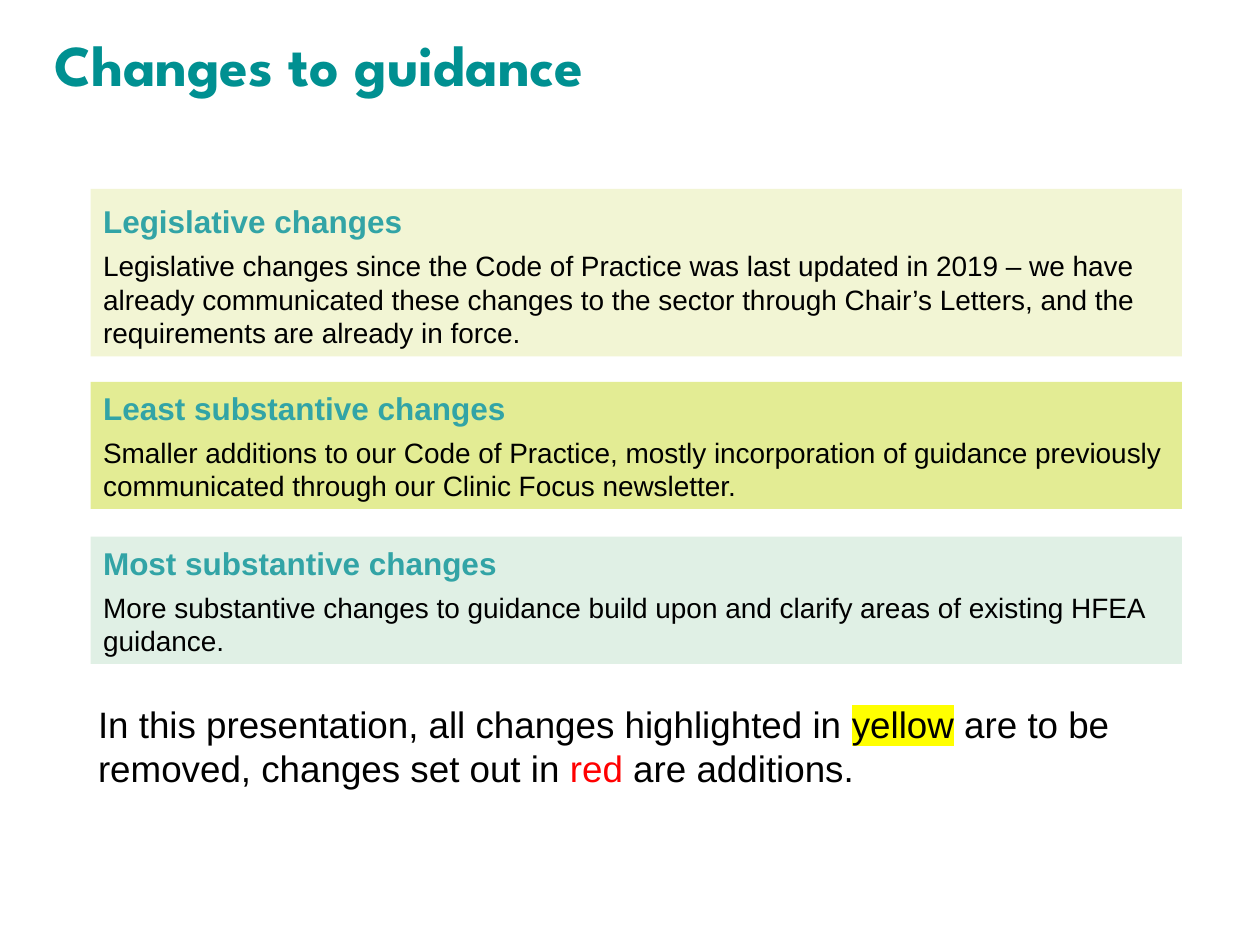
import dataclasses

import lxml.etree
import pptx
import pptx.dml.color
import pptx.enum.shapes
import pptx.enum.text
import pptx.oxml.ns
import pptx.util

Inches = pptx.util.Inches
Pt = pptx.util.Pt


@dataclasses.dataclass(frozen=True)
class Theme:
    font: str = "Arial"
    display: str = "League Spartan"
    title: str = "009091"
    head: str = "32A4A6"
    ink: str = "000000"
    red: str = "FF0000"
    yellow: str = "FFFF00"
    pale: str = "F2F5D4"
    lime: str = "E3EC94"
    mint: str = "E0F0E5"
    title_size: int = 33
    head_size: int = 18
    body_size: int = 16
    note_size: int = 21


THEME = Theme()

PANELS = [
    (1.5, 1.33, THEME.pale, 25.2, "Legislative changes",
     "Legislative changes since the Code of Practice was last updated in 2019 – "
     "we have already communicated these changes to the sector through Chair’s "
     "Letters, and the requirements are already in force."),
    (3.03, 1.01, THEME.lime, None, "Least substantive changes",
     "Smaller additions to our Code of Practice, mostly incorporation of guidance "
     "previously communicated through our Clinic Focus newsletter."),
    (4.26, 1.01, THEME.mint, None, "Most substantive changes",
     "More substantive changes to guidance build upon and clarify areas of "
     "existing HFEA guidance."),
]

NOTE = [
    ("In this presentation, all changes highlighted in ", THEME.ink, None),
    ("yellow", THEME.ink, THEME.yellow),
    (" are to be removed, changes set out in ", THEME.ink, None),
    ("red", THEME.red, None),
    (" are additions.", THEME.ink, None),
]


def rgb(code):
    return pptx.dml.color.RGBColor.from_string(code)


def style(run, size, color, bold=False, face=THEME.font):
    run.font.size = Pt(size)
    run.font.bold = bold
    run.font.name = face
    run.font.color.rgb = rgb(color)


def mark(run, color):
    qn = pptx.oxml.ns.qn
    light = lxml.etree.Element(qn("a:highlight"))
    lxml.etree.SubElement(light, qn("a:srgbClr"), val=color)
    run.font._element.find(qn("a:solidFill")).addnext(light)


def add_box(slide, left, top, width, height):
    box = slide.shapes.add_textbox(
        Inches(left), Inches(top), Inches(width), Inches(height))
    box.text_frame.word_wrap = True
    return box.text_frame


def add_title(slide, text):
    frame = add_box(slide, 0.43, 0.32, 9.13, 0.48)
    frame.margin_left = frame.margin_right = 0
    frame.margin_top = frame.margin_bottom = 0
    frame.text = text
    line = frame.paragraphs[0]
    line.line_spacing = Pt(THEME.title_size)
    style(line.runs[0], THEME.title_size, THEME.title, True, THEME.display)


def add_panel(slide, top, height, fill, pitch, head, body):
    panel = slide.shapes.add_shape(
        pptx.enum.shapes.MSO_SHAPE.RECTANGLE,
        Inches(0.72), Inches(top), Inches(8.66), Inches(height))
    panel.shadow.inherit = False
    panel.fill.solid()
    panel.fill.fore_color.rgb = rgb(fill)
    panel.line.fill.background()
    frame = panel.text_frame
    frame.word_wrap = True
    frame.vertical_anchor = pptx.enum.text.MSO_ANCHOR.MIDDLE
    frame.text = head + "\n" + body
    first, second = frame.paragraphs
    for para in (first, second):
        para.alignment = pptx.enum.text.PP_ALIGN.LEFT
    if pitch:
        first.line_spacing = Pt(pitch)
    second.space_before = Pt(5)
    style(first.runs[0], THEME.head_size, THEME.head, True)
    style(second.runs[0], THEME.body_size, THEME.ink)


def add_note(slide, parts):
    para = add_box(slide, 0.68, 5.52, 8.63, 0.81).paragraphs[0]
    para.space_after = Pt(6)
    for text, color, light in parts:
        run = para.add_run()
        run.text = text
        style(run, THEME.note_size, color)
        if light:
            mark(run, light)


def main():
    deck = pptx.Presentation()
    deck.slide_width = Inches(10)
    deck.slide_height = Inches(7.5)
    slide = deck.slides.add_slide(deck.slide_layouts[6])
    add_title(slide, "Changes to guidance")
    for panel in PANELS:
        add_panel(slide, *panel)
    add_note(slide, NOTE)
    deck.save("out.pptx")


if __name__ == "__main__":
    main()
